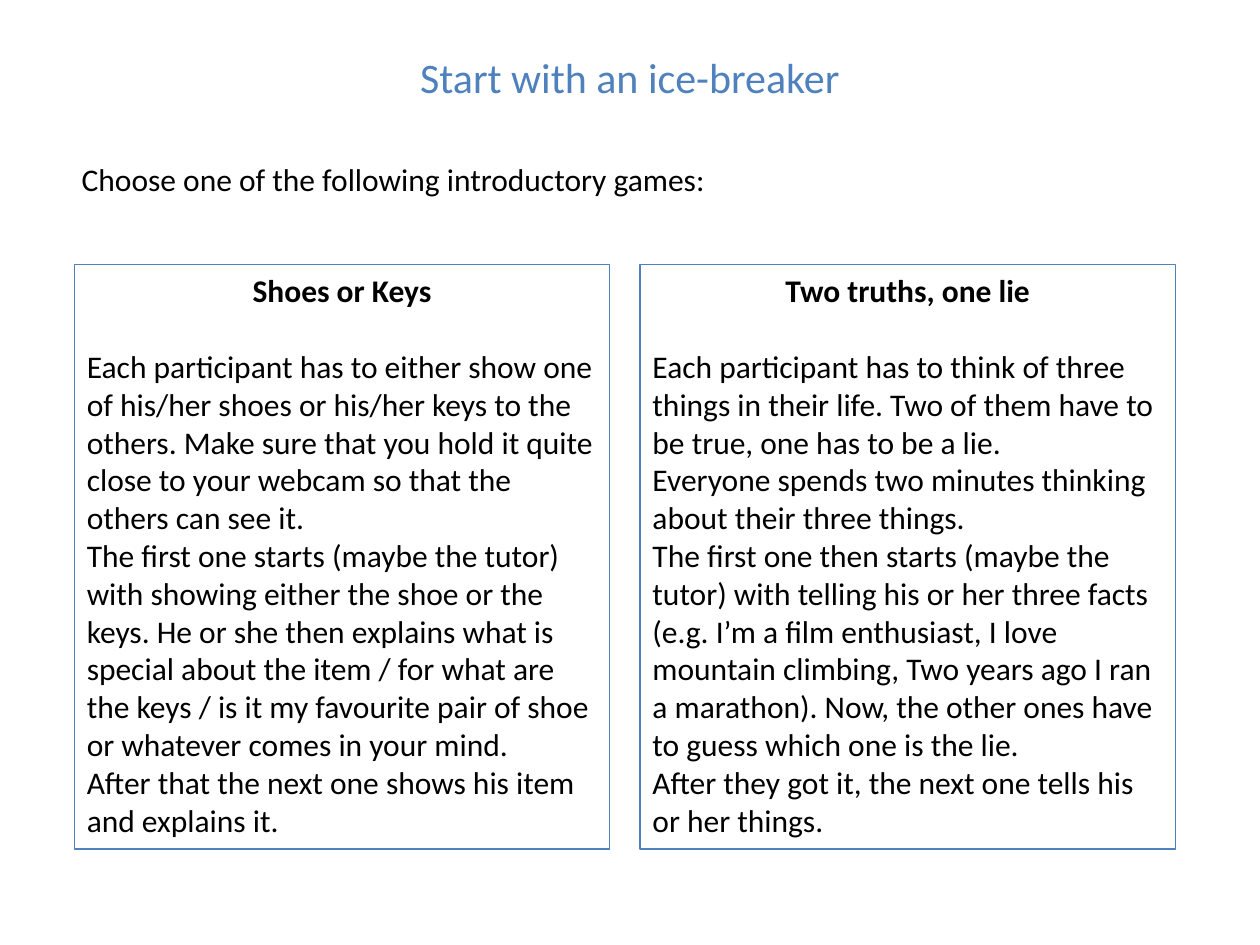
from pptx import Presentation
from pptx.dml.color import RGBColor
from pptx.enum import shapes, text
from pptx.util import Pt

COLOURS = {"accent": "4F81BD", "body": "000000"}
FONT = "Calibri"
BODY_SIZE = 18
BLANK_LINE = 22

CARD_LEFT, CARD_TOP = 42.5, 151.2
CARD_WIDTH, CARD_HEIGHT = 306, 334
CARD_GAP = 17.25

GAMES = [
    ("Shoes or Keys", [
        "Each participant has to either show one of his/her shoes or his/her keys to the others. "
        "Make sure that you hold it quite close to your webcam so that the others can see it.",
        "The first one starts (maybe the tutor) with showing either the shoe or the keys. "
        "He or she then explains what is special about the item / for what are the keys / "
        "is it my favourite pair of shoe or whatever comes in your mind.",
        "After that the next one shows his item and explains it.",
    ]),
    ("Two truths, one lie", [
        "Each participant has to think of three things in their life. "
        "Two of them have to be true, one has to be a lie.",
        "Everyone spends two minutes thinking about their three things.",
        "The first one then starts (maybe the tutor) with telling his or her three facts "
        "(e.g. I’m a film enthusiast, I love mountain climbing, Two years ago I ran a marathon). "
        "Now, the other ones have to guess which one is the lie.",
        "After they got it, the next one tells his or her things.",
    ]),
]


def colour(name):
    return RGBColor.from_string(COLOURS[name])


def format_paragraph(paragraph, size=BODY_SIZE, colour_name="body", bold=False,
                     alignment=text.PP_ALIGN.LEFT):
    paragraph.alignment = alignment
    for run in paragraph.runs:
        run.font.name = FONT
        run.font.size = Pt(size)
        run.font.bold = bold
        run.font.color.rgb = colour(colour_name)


def add_text(slide, left, top, width, height, content, **style):
    text_frame = slide.shapes.add_textbox(
        Pt(left), Pt(top), Pt(width), Pt(height)).text_frame
    text_frame.word_wrap = True
    text_frame.text = content
    format_paragraph(text_frame.paragraphs[0], **style)


def add_game_card(slide, left, heading, instructions):
    """Add an outlined card with a centred heading above its instructions."""
    shape = slide.shapes.add_shape(
        shapes.MSO_SHAPE.RECTANGLE,
        Pt(left), Pt(CARD_TOP), Pt(CARD_WIDTH), Pt(CARD_HEIGHT))
    shape.shadow.inherit = False
    shape.fill.background()
    shape.line.color.rgb = colour("accent")
    shape.line.width = Pt(0.75)

    text_frame = shape.text_frame
    text_frame.word_wrap = True
    text_frame.vertical_anchor = text.MSO_ANCHOR.TOP
    text_frame.text = "\n".join([heading, *instructions])
    title, *steps = text_frame.paragraphs
    format_paragraph(title, bold=True, alignment=text.PP_ALIGN.CENTER)
    title.space_after = Pt(BLANK_LINE)
    for paragraph in steps:
        format_paragraph(paragraph)


def main():
    presentation = Presentation()
    presentation.slide_width, presentation.slide_height = Pt(720), Pt(540)
    slide = presentation.slides.add_slide(presentation.slide_layouts[6])

    add_text(slide, 42.5, 26, 635, 45, "Start with an ice-breaker",
             size=24, colour_name="accent", alignment=text.PP_ALIGN.CENTER)
    add_text(slide, 39.6, 87.8, 641, 29,
             "Choose one of the following introductory games:")
    for index, (heading, instructions) in enumerate(GAMES):
        left = CARD_LEFT + index * (CARD_WIDTH + CARD_GAP)
        add_game_card(slide, left, heading, instructions)

    presentation.save("out.pptx")


if __name__ == "__main__":
    main()
